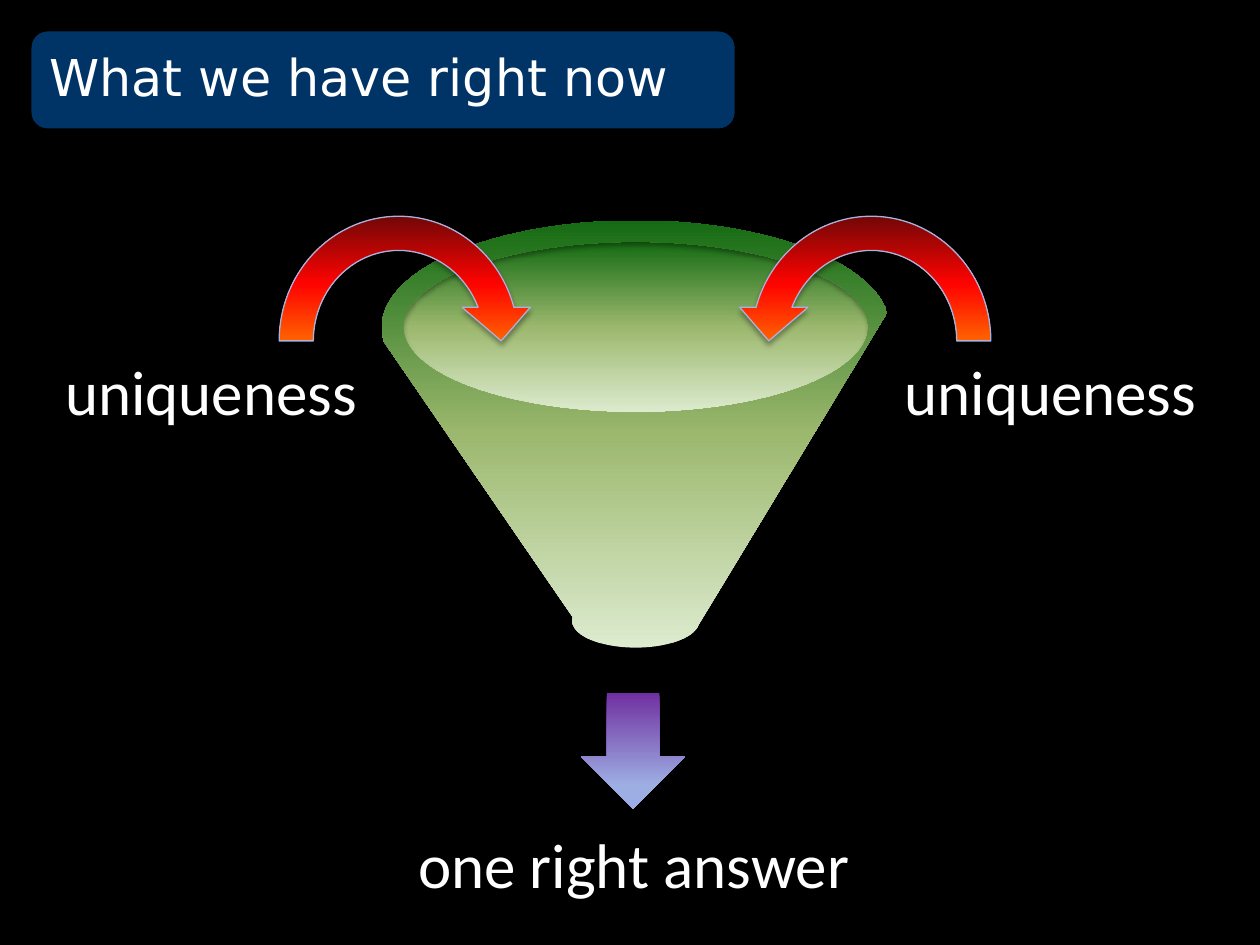
from lxml.etree import SubElement
from pptx import Presentation
from pptx.dml.color import RGBColor
from pptx.enum.shapes import MSO_SHAPE
from pptx.enum.text import MSO_ANCHOR, MSO_AUTO_SIZE, PP_ALIGN
from pptx.oxml.ns import qn
from pptx.util import Pt

THEME = {
    "background": "000000", "text": "FFFFFF", "banner": "003366", "outline": "A5B3DE",
    "title_font": "DejaVu Sans", "title_size": 29,
    "label_font": "Calibri", "label_size": 36,
    # Gradient stops, from the bottom of the unrotated shape upwards
    "green": [(0, "DDEBCF"), (50, "9CB86E"), (100, "156B13")],
    "purple": [(0, "7030A0"), (80, "9DAEE3"), (100, "9CAEE6")],
    "red": [(0, "C00000"), (45, "FF7A00"), (70, "FF0300"), (100, "4D0808")],
}

# Content: positions are left, top, width, height in points
TITLE = ("What we have right now", (19.4, 20.9, 373.7, 49.7))
BANNER = (18, 18, 401.8, 55.4)
LABELS = [
    ("uniqueness", (509.8, 198, 182.9, 51.1)),
    ("uniqueness", (30.2, 198, 182.9, 51.1)),
    ("one right answer", (231.8, 468, 262.8, 51.1)),
]
FUNNEL = [
    (MSO_SHAPE.OVAL, (229, 138.2, 267.1, 97.9)),
    (MSO_SHAPE.FUNNEL, (218.2, 126, 290.2, 244.1)),
]
RESULT_ARROW = (331.9, 396, 59.8, 66.2)
INPUT_ARROWS = [((149.8, 113.8, 156.2, 162), False), ((419.8, 113.8, 156.2, 162), True)]


def color(name):
    return RGBColor.from_string(THEME[name])


def pts(box):
    return [Pt(v) for v in box]


def add_shadow(shape):
    effects = SubElement(shape._element.spPr, qn("a:effectLst"))
    shadow = SubElement(effects, qn("a:outerShdw"), blurRad=str(Pt(3.1)),
                        dist=str(Pt(1.8)), dir="5400000", rotWithShape="0")
    black = SubElement(shadow, qn("a:srgbClr"), val="000000")
    SubElement(black, qn("a:alpha"), val="35000")


def add_part(s, kind, box, fill, outline=None):
    shape = s.shapes.add_shape(kind, *pts(box))
    if isinstance(THEME[fill], str):
        shape.fill.solid()
        shape.fill.fore_color.rgb = color(fill)
    else:
        shape.fill.gradient()
        shape.fill.gradient_angle = 90
        stops = shape._element.spPr.find(qn("a:gradFill")).find(qn("a:gsLst"))
        for old in list(stops):
            stops.remove(old)
        for position, rgb in THEME[fill]:
            stop = SubElement(stops, qn("a:gs"), pos=str(position * 1000))
            SubElement(stop, qn("a:srgbClr"), val=rgb)
    if outline:
        shape.line.color.rgb = color(outline)
        shape.line.width = Pt(0.75)
    else:
        shape.line.fill.background()
    add_shadow(shape)
    return shape


def write(tf, text, role, align):
    tf.text = text
    p = tf.paragraphs[0]
    p.alignment = align
    p.font.name = THEME[role + "_font"]
    p.font.size = Pt(THEME[role + "_size"])
    p.font.bold = False
    p.font.color.rgb = color("text")
    return p


def main():
    prs = Presentation()
    prs.slide_width, prs.slide_height = Pt(720), Pt(540)
    s = prs.slides.add_slide(prs.slide_layouts[5])
    s.background.fill.solid()
    s.background.fill.fore_color.rgb = color("background")

    # Funnel and the arrow out of it
    for kind, box in FUNNEL:
        add_part(s, kind, box, "green")
    add_part(s, MSO_SHAPE.UP_ARROW, RESULT_ARROW, "purple").rotation = 180

    # Labels
    for text, box in LABELS:
        tf = s.shapes.add_textbox(*pts(box)).text_frame
        tf.word_wrap = False
        tf.auto_size = MSO_AUTO_SIZE.SHAPE_TO_FIT_TEXT
        write(tf, text, "label", PP_ALIGN.LEFT)

    # Mirrored arrows into the funnel
    for box, mirrored in INPUT_ARROWS:
        arrow = add_part(s, MSO_SHAPE.CIRCULAR_ARROW, box, "red", "outline")
        if mirrored:
            arrow._element.spPr.find(qn("a:xfrm")).set("flipH", "1")

    # Title on its banner
    add_part(s, MSO_SHAPE.ROUNDED_RECTANGLE, BANNER, "banner")
    text, box = TITLE
    title = s.shapes.title
    title.left, title.top, title.width, title.height = pts(box)
    tf = title.text_frame
    tf.word_wrap = True
    tf.auto_size = MSO_AUTO_SIZE.NONE
    tf.vertical_anchor = MSO_ANCHOR.MIDDLE
    tf.margin_left = tf.margin_right = tf.margin_top = tf.margin_bottom = Pt(8.64)
    write(tf, text, "title", PP_ALIGN.LEFT).line_spacing = 0.9
    s.shapes._spTree.append(title._element)  # bring in front of the banner

    prs.save("out.pptx")


if __name__ == "__main__":
    main()
